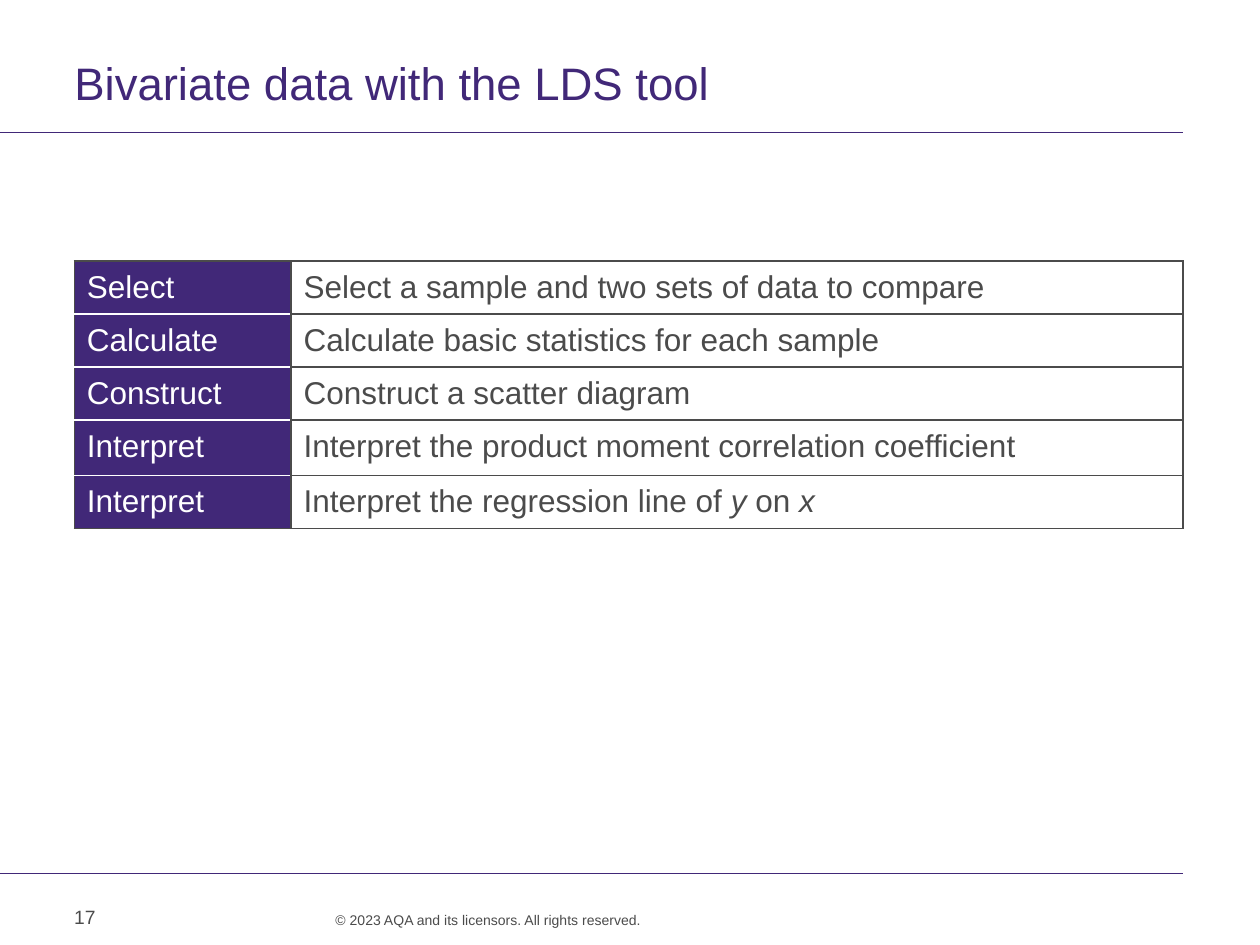
from lxml import etree
from pptx import Presentation
from pptx.dml.color import RGBColor
from pptx.enum.shapes import MSO_CONNECTOR
from pptx.enum.text import MSO_ANCHOR, PP_ALIGN
from pptx.oxml.ns import qn
from pptx.util import Inches, Pt

STRAIGHT = MSO_CONNECTOR.STRAIGHT
TOP, MIDDLE = MSO_ANCHOR.TOP, MSO_ANCHOR.MIDDLE
LEFT, RIGHT = PP_ALIGN.LEFT, PP_ALIGN.RIGHT

PURPLE = RGBColor(0x41, 0x28, 0x78)
GREY = RGBColor(0x4B, 0x4B, 0x4B)
WHITE = RGBColor(0xFF, 0xFF, 0xFF)

# Grid of 100 columns by 75 rows
COLUMN = ROW = Inches(0.1)
MARGIN, RIGHT_EDGE = 5.9, 93.9
CONTENT_WIDTH = RIGHT_EDGE - MARGIN

# Each step is a heading and spans of (text, italic)
STEPS = [
    ("Select", [("Select a sample and two sets of data to compare", False)]),
    ("Calculate", [("Calculate basic statistics for each sample", False)]),
    ("Construct", [("Construct a scatter diagram", False)]),
    ("Interpret", [("Interpret the product moment correlation coefficient", False)]),
    ("Interpret", [("Interpret the regression line of ", False), ("y", True),
                   (" on ", False), ("x", True)]),
]
ROW_HEIGHTS = [4.1, 4.1, 4.1, 4.4, 4.1]


class SlideBuilder:
    font = "Arial"

    def __init__(self, deck):
        self.slide = deck.slides.add_slide(deck.slide_layouts[5])

    def area(self, left, top, width, height):
        return (round(left * COLUMN), round(top * ROW),
                round(width * COLUMN), round(height * ROW))

    def style(self, para, size, color, align=LEFT):
        para.alignment = align
        para.font.name = self.font
        para.font.size = Pt(size)
        para.font.color.rgb = color

    def inset(self, frame, left, top, right, bottom):
        frame.margin_left, frame.margin_top = Inches(left), Inches(top)
        frame.margin_right, frame.margin_bottom = Inches(right), Inches(bottom)

    def title(self, text, *place):
        title = self.slide.shapes.title
        title.left, title.top, title.width, title.height = self.area(*place)
        frame = title.text_frame
        frame.text = text
        frame.vertical_anchor = TOP
        self.inset(frame, 0, 0, 0.1, 0)
        para = frame.paragraphs[0]
        para.line_spacing = Pt(28)
        self.style(para, 26, PURPLE)

    def rule(self, row):
        left, top, width, _ = self.area(0, row, RIGHT_EDGE, 0)
        line = self.slide.shapes.add_connector(STRAIGHT, left, top, left + width, top)
        line.line.color.rgb = PURPLE
        line.line.width = Pt(0.6)
        etree.SubElement(line.element.spPr, qn("a:effectLst"))

    def text(self, text, place, size, align=LEFT, anchor=TOP,
             insets=(0.1, 0.05, 0.1, 0.05), spacing=None):
        frame = self.slide.shapes.add_textbox(*self.area(*place)).text_frame
        frame.word_wrap = True
        frame.vertical_anchor = anchor
        self.inset(frame, *insets)
        frame.text = text
        para = frame.paragraphs[0]
        para.line_spacing = spacing
        self.style(para, size, GREY, align)

    def cell(self, cell, spans, color, fill, borders):
        para = cell.text_frame.paragraphs[0]
        para.line_spacing = 1.07
        para.space_after = Pt(8)
        self.style(para, 18, color)
        for text, italic in spans:
            span = para.add_run()
            span.text = text
            if italic:
                span.font.italic = True
        # Borders go before the fill in the cell properties
        properties = cell._tc.get_or_add_tcPr()
        for side, border in zip("LRTB", borders):
            line = etree.SubElement(properties, qn(f"a:ln{side}"), w=str(Pt(1)))
            solid = etree.SubElement(line, qn("a:solidFill"))
            etree.SubElement(solid, qn("a:srgbClr"), val=str(border))
        cell.fill.solid()
        cell.fill.fore_color.rgb = fill

    def steps_table(self, steps, column_widths, row_heights, left, top):
        place = self.area(left, top, sum(column_widths), sum(row_heights))
        table = self.slide.shapes.add_table(len(steps), len(column_widths), *place).table
        table.first_row = table.horz_banding = False
        for column, width in zip(table.columns, column_widths):
            column.width = round(width * COLUMN)
        last = len(steps) - 1
        for index, (heading, spans) in enumerate(steps):
            table.rows[index].height = round(row_heights[index] * ROW)
            above = GREY if index == 0 else WHITE
            below = GREY if index == last else WHITE
            self.cell(table.cell(index, 0), [(heading, False)], WHITE, PURPLE,
                      [GREY, GREY, above, below])
            self.cell(table.cell(index, 1), spans, GREY, WHITE, [GREY] * 4)


def main():
    deck = Presentation()
    deck.slide_width, deck.slide_height = 100 * COLUMN, 75 * ROW
    page = SlideBuilder(deck)

    # Title and rules
    page.rule(10.5)
    page.rule(69.3)
    page.title("Bivariate data with the LDS tool", MARGIN, 4.8, CONTENT_WIDTH, 4.7)

    # Footer
    page.text("© 2023 AQA and its licensors. All rights reserved.",
              (16.7, 72.3, 34.2, 2.6), 8, align=RIGHT, insets=(0, 0, 0, 0), spacing=Pt(10))
    page.text("17", (4.9, 70.8, 7.6, 4), 11, anchor=MIDDLE)

    # Steps
    page.steps_table(STEPS, [17.2, CONTENT_WIDTH - 17.2], ROW_HEIGHTS, MARGIN, 20.7)

    deck.save("out.pptx")


if __name__ == "__main__":
    main()
